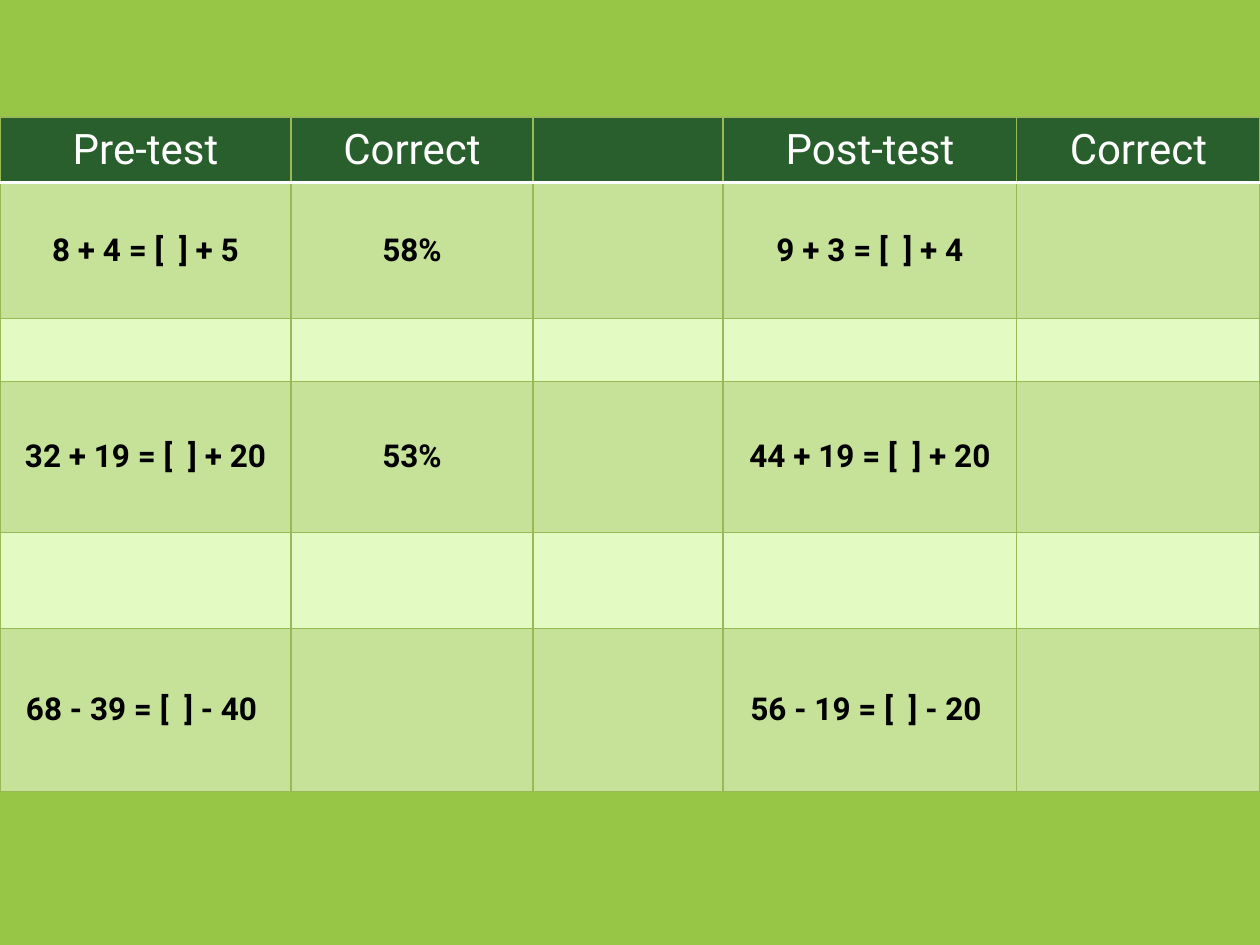
from dataclasses import dataclass

from lxml import etree
from pptx import Presentation
from pptx import util as u
from pptx.dml.color import RGBColor
from pptx.enum import shapes, text
from pptx.oxml.ns import qn

PX = 914400 / 126


@dataclass(frozen=True)
class Theme:
    font: str = "Roboto"
    page: str = "97C646"
    header: str = "295F2C"
    header_text: str = "FFFFFF"
    band: str = "C6E198"
    gap: str = "E3FAC3"
    body_text: str = "000000"
    grid: str = "98B955"
    rule: str = "FFFFFF"
    header_size: int = 24
    body_size: int = 18
    grid_width: float = 0.75
    rule_width: float = 2


@dataclass(frozen=True)
class Row:
    height: int
    fill: str
    texts: tuple[str, ...] = ("",) * 5


THEME = Theme()
COLUMNS = (291, 242, 190, 294, 243)
ROWS = (
    Row(64, THEME.header, ("Pre-test", "Correct", "", "Post-test", "Correct")),
    Row(136, THEME.band, ("8 + 4 = [  ] + 5", "58%", "", "9 + 3 = [  ] + 4", "")),
    Row(63, THEME.gap),
    Row(151, THEME.band, ("32 + 19 = [  ] + 20", "53%", "", "44 + 19 = [  ] + 20", "")),
    Row(96, THEME.gap),
    Row(163, THEME.band, ("68 - 39 = [  ] - 40 ", "", "", "56 - 19 = [  ] - 20 ", "")),
)


def px(n: int) -> int:
    return round(n * PX)


def rgb(color: str) -> RGBColor:
    return RGBColor.from_string(color)


def set_borders(cell, row_index: int) -> None:
    """Draw the grid, with the heavy rule between header and body."""
    grid = (THEME.grid, THEME.grid_width)
    rule = (THEME.rule, THEME.rule_width)
    borders = {
        "a:lnL": grid,
        "a:lnR": grid,
        "a:lnT": rule if row_index == 1 else grid,
        "a:lnB": rule if row_index == 0 else grid,
    }
    props = cell._tc.get_or_add_tcPr()
    for i, (tag, (color, width)) in enumerate(borders.items()):
        line = etree.Element(qn(tag), w=str(u.Pt(width)))
        fill = etree.SubElement(line, qn("a:solidFill"))
        etree.SubElement(fill, qn("a:srgbClr"), val=color)
        props.insert(i, line)


def fill_cell(cell, value: str, row: Row, row_index: int) -> None:
    is_header = row_index == 0
    cell.fill.solid()
    cell.fill.fore_color.rgb = rgb(row.fill)
    cell.vertical_anchor = text.MSO_ANCHOR.MIDDLE
    cell.margin_left = cell.margin_right = px(8)
    cell.margin_top = cell.margin_bottom = px(8)
    set_borders(cell, row_index)
    p = cell.text_frame.paragraphs[0]
    p.alignment = text.PP_ALIGN.CENTER
    if value:
        p.text = value
    p.font.name = THEME.font
    p.font.size = u.Pt(THEME.header_size if is_header else THEME.body_size)
    p.font.bold = not is_header
    p.font.color.rgb = rgb(THEME.header_text if is_header else THEME.body_text)


def add_backdrop(s, width: int, height: int) -> None:
    sp = s.shapes.add_shape(shapes.MSO_SHAPE.RECTANGLE, 0, 0, width, height)
    sp.shadow.inherit = False
    sp.fill.solid()
    sp.fill.fore_color.rgb = rgb(THEME.page)
    sp.line.fill.background()


def add_results(s, top: int) -> None:
    table = s.shapes.add_table(
        len(ROWS), len(COLUMNS), 0, px(top),
        px(sum(COLUMNS)), px(sum(row.height for row in ROWS)),
    ).table
    table.first_row = table.horz_banding = False
    for column, width in zip(table.columns, COLUMNS):
        column.width = px(width)
    for i, row in enumerate(ROWS):
        table.rows[i].height = px(row.height)
        for j, value in enumerate(row.texts):
            fill_cell(table.cell(i, j), value, row, i)


def main() -> None:
    prs = Presentation()
    prs.slide_width, prs.slide_height = px(1260), px(945)
    s = prs.slides.add_slide(prs.slide_layouts[6])
    add_backdrop(s, prs.slide_width, prs.slide_height)
    add_results(s, top=117)
    prs.save("out.pptx")


if __name__ == "__main__":
    main()
